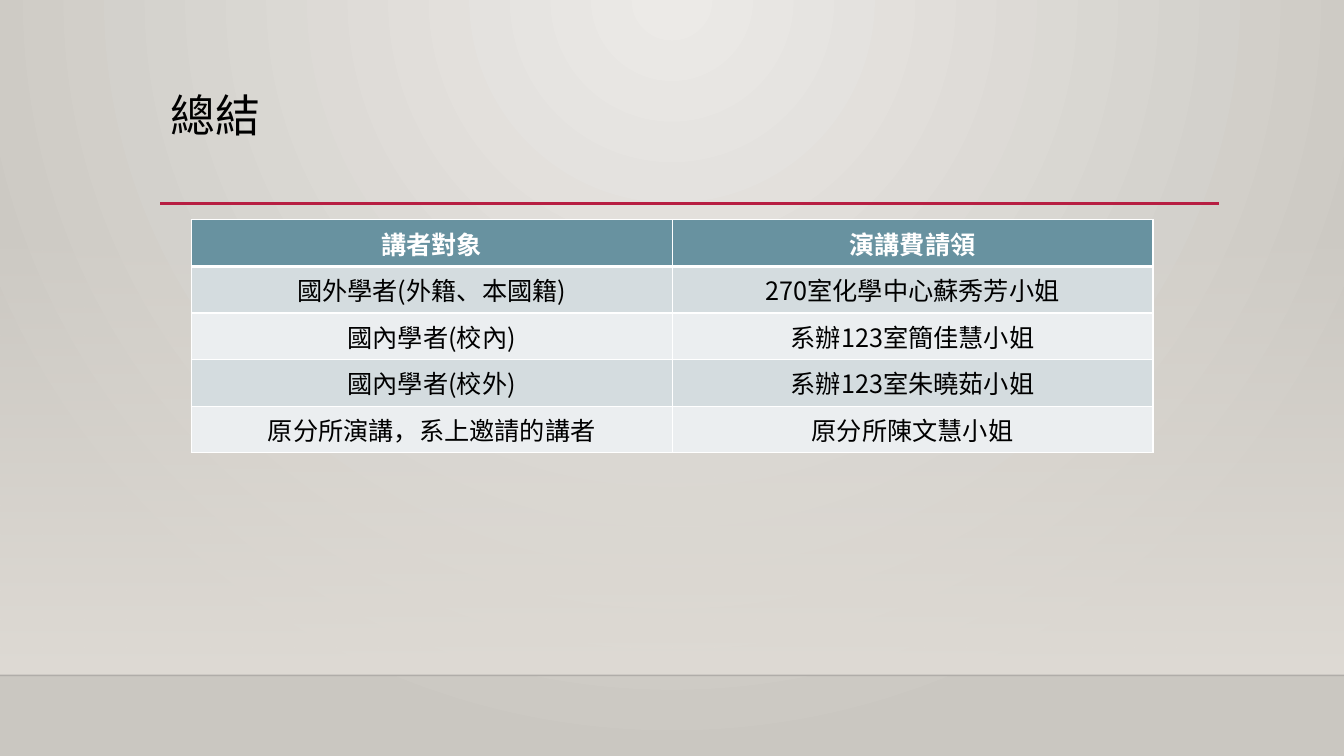
from lxml.etree import SubElement
from pptx import Presentation
from pptx.dml.color import RGBColor
from pptx.enum.shapes import MSO_CONNECTOR as Connector, MSO_SHAPE as Shape
from pptx.enum.text import MSO_ANCHOR as Anchor, PP_ALIGN as Align
from pptx.oxml import parse_xml
from pptx.oxml.ns import nsdecls, qn
from pptx.util import Pt

WIDTH, HEIGHT = 960, 540
FLOOR = 482.4


def colour(code):
    return RGBColor.from_string(code)


class SlideWriter:
    heading_font = "Calibri"
    body_font = "Noto Sans CJK SC"
    ink, white, accent = "000000", "FFFFFF", "B71E42"
    header_fill = "6892A0"
    bands = ("D4DCDF", "EBEEF0")

    def __init__(self, deck):
        self.page = deck.slides.add_slide(deck.slide_layouts[5])

    def set_stops(self, fill, codes):
        fill.gradient()
        for stop, code, position in zip(fill.gradient_stops, codes, (0, 1)):
            stop.color.rgb = colour(code)
            stop.position = position

    def set_alpha(self, element, percent):
        SubElement(element, qn("a:alpha")).set("val", str(percent * 1000))

    def background(self, inner, outer):
        self.set_stops(self.page.background.fill, (inner, outer))
        gradient = self.page.element.xpath(".//p:bg//a:gradFill")[0]
        gradient.replace(gradient.find(qn("a:lin")), parse_xml(
            f'<a:path {nsdecls("a")} path="circle">'
            '<a:fillToRect l="43000" t="0" r="43000" b="100000"/></a:path>'))

    def fading_band(self, left, top, width, height, code):
        band = self.page.shapes.add_shape(
            Shape.RECTANGLE, Pt(left), Pt(top), Pt(width), Pt(height))
        band.shadow.inherit = False
        band.line.fill.background()
        self.set_stops(band.fill, (code, code))
        band.fill.gradient_angle = 270
        first = band.element.spPr.find(".//" + qn("a:srgbClr"))
        self.set_alpha(first, 0)

    def rule(self, left, right, top, code, weight, alpha=100):
        line = self.page.shapes.add_connector(
            Connector.STRAIGHT, Pt(left), Pt(top), Pt(right), Pt(top))
        line.line.color.rgb = colour(code)
        line.line.width = Pt(weight)
        properties = line.element.spPr
        if alpha < 100:
            self.set_alpha(properties.find(".//" + qn("a:srgbClr")), alpha)
        SubElement(properties, qn("a:effectLst"))

    def style(self, para, font, size, code, align, bold=False):
        para.alignment = align
        para.font.name = font
        para.font.size = Pt(size)
        para.font.bold = bold
        para.font.color.rgb = colour(code)

    def title(self, text, left, top, width, height):
        box = self.page.shapes.title
        box.left, box.top, box.width, box.height = map(Pt, (left, top, width, height))
        box.text_frame.text = text
        box.text_frame.vertical_anchor = Anchor.TOP
        para = box.text_frame.paragraphs[0]
        para.line_spacing = 0.9
        self.style(para, self.heading_font, 32, self.ink, Align.LEFT)

    def borders(self, cell, top, bottom):
        properties = cell._tc.get_or_add_tcPr()
        weights = {"lnL": 1, "lnR": 1, "lnT": top, "lnB": bottom}
        for index, (side, weight) in enumerate(weights.items()):
            properties.insert(index, parse_xml(
                f'<a:{side} {nsdecls("a")} w="{Pt(weight)}"><a:solidFill>'
                f'<a:srgbClr val="{self.white}"/></a:solidFill></a:{side}>'))

    def table(self, rows, left, top, width, row_height):
        table = self.page.shapes.add_table(
            len(rows), len(rows[0]), Pt(left), Pt(top),
            Pt(width), Pt(row_height * len(rows))).table
        for number, row in enumerate(rows):
            header = number == 0
            for column, text in enumerate(row):
                cell = table.cell(number, column)
                cell.text = text
                cell.fill.solid()
                cell.fill.fore_color.rgb = colour(
                    self.header_fill if header else self.bands[(number - 1) % 2])
                self.borders(cell, 3 if number == 1 else 1, 3 if header else 1)
                self.style(cell.text_frame.paragraphs[0],
                           self.heading_font if header else self.body_font, 18,
                           self.white if header else self.ink, Align.CENTER, header)


def main():
    deck = Presentation()
    deck.slide_width, deck.slide_height = Pt(WIDTH), Pt(HEIGHT)
    writer = SlideWriter(deck)
    writer.background("ECEAE7", "CAC7C1")
    writer.fading_band(0, 159, WIDTH, FLOOR - 159, "DFDBD5")
    writer.rule(0, WIDTH, FLOOR, "000001", 1, alpha=20)
    writer.rule(114.5, 871, 145.4, writer.accent, 2.5)
    writer.title("總結", 114.5, 63.4, 756, 82.8)
    writer.table([
        ("講者對象", "演講費請領"),
        ("國外學者(外籍、本國籍)", "270室化學中心蘇秀芳小姐"),
        ("國內學者(校內)", "系辦123室簡佳慧小姐"),
        ("國內學者(校外)", "系辦123室朱曉茹小姐"),
        ("原分所演講，系上邀請的講者", "原分所陳文慧小姐"),
    ], 136.6, 157, 687, 32.3)
    deck.save("out.pptx")


if __name__ == "__main__":
    main()
